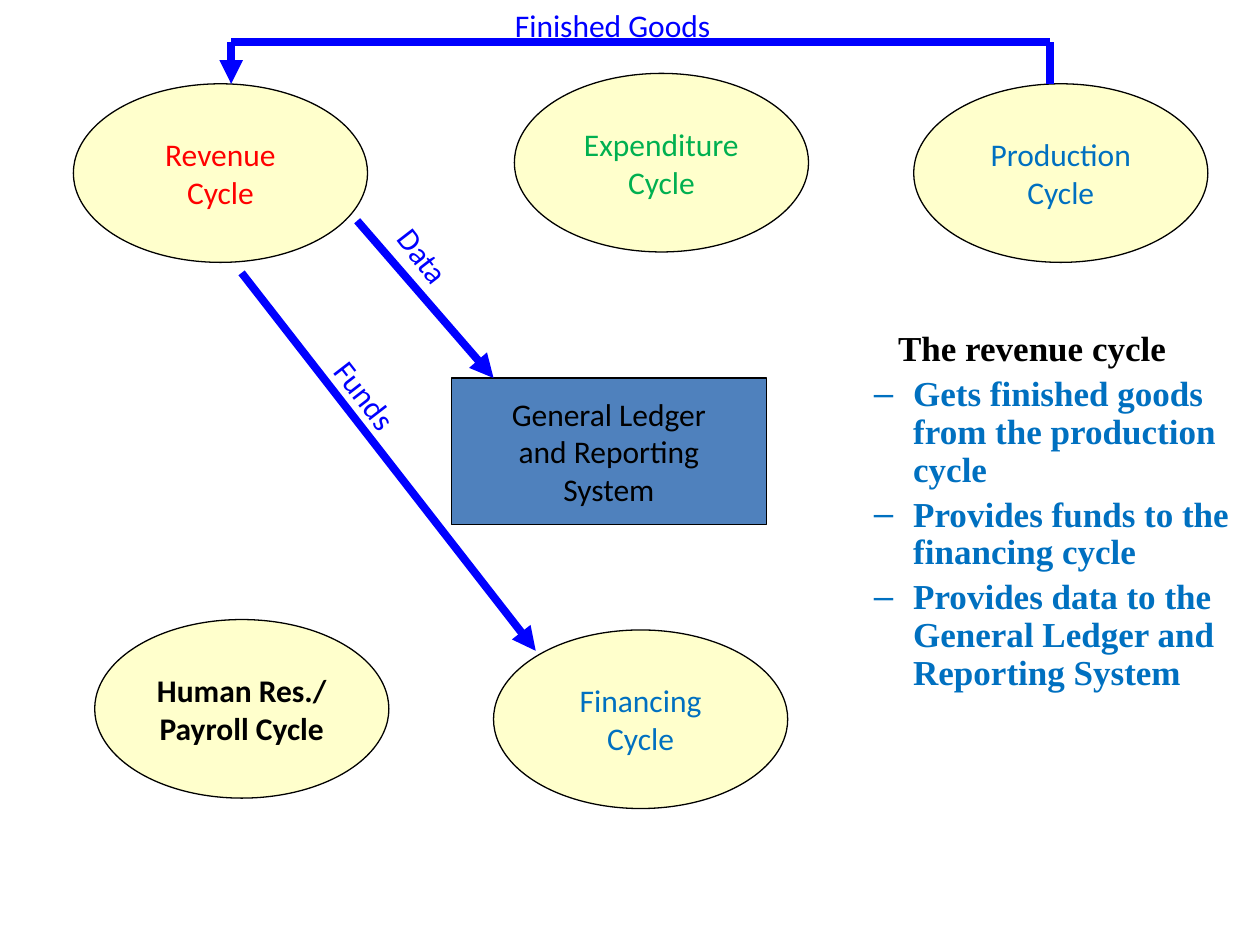
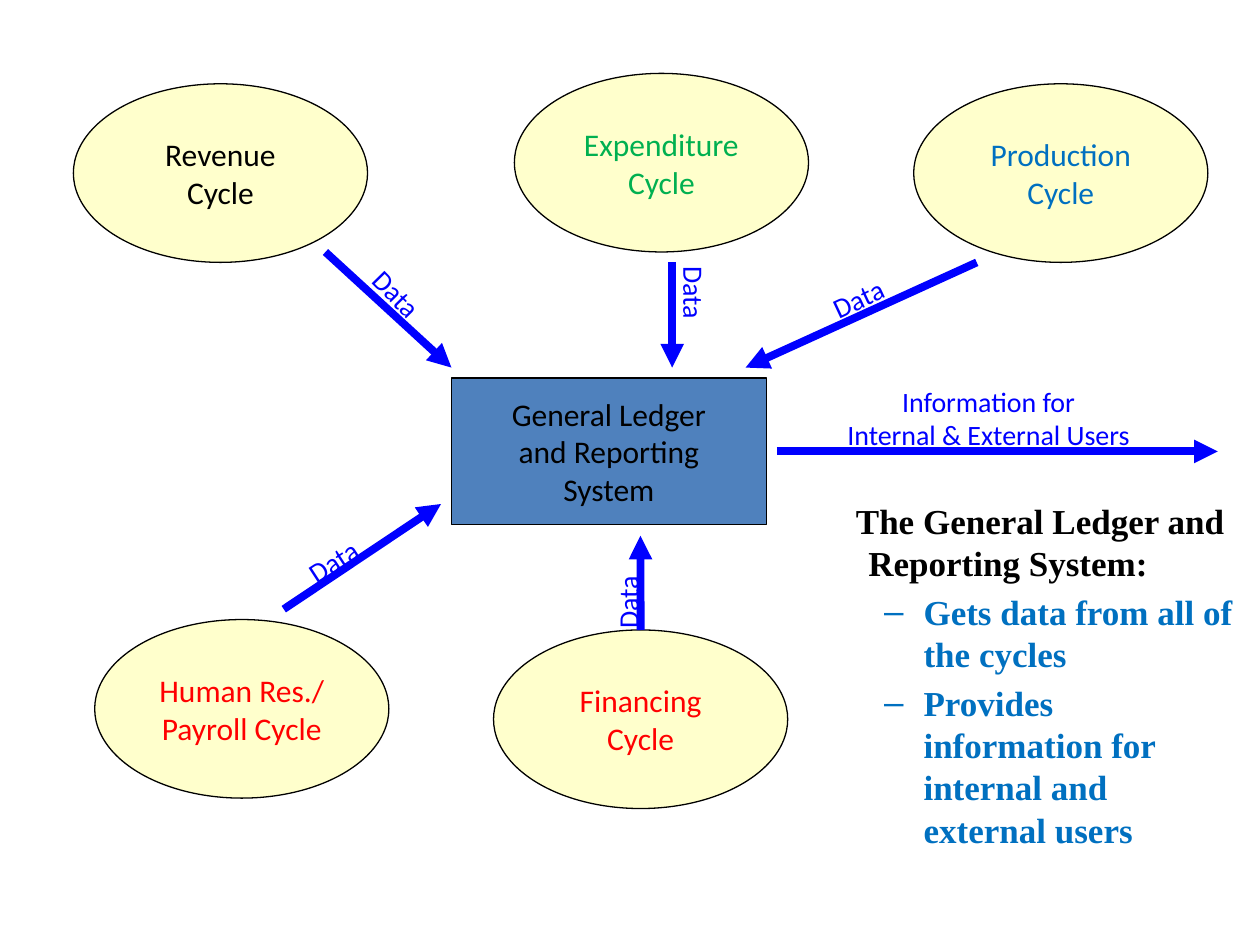
"""Build two slides on how accounting cycles exchange goods, funds and data."""
import pptx
import pptx.util
import pptx.dml.color
import pptx.enum.shapes
import pptx.enum.text
import pptx.oxml.ns
from lxml import etree

Cm = pptx.util.Cm
Pt = pptx.util.Pt
MIDDLE = pptx.enum.text.MSO_ANCHOR.MIDDLE
CENTER = pptx.enum.text.PP_ALIGN.CENTER
OVAL = pptx.enum.shapes.MSO_SHAPE.OVAL
RECTANGLE = pptx.enum.shapes.MSO_SHAPE.RECTANGLE

COLORS = {
    "black": "000000",
    "white": "FFFFFF",
    "cream": "FFFFCC",
    "steel": "4F81BD",
    "flow": "0000FF",
    "red": "FF0000",
    "green": "00B050",
    "blue": "0070C0",
}

CYCLES = {
    "revenue": (1.48, 1.69, ["Revenue", "Cycle"]),
    "expenditure": (10.37, 1.48, ["Expenditure", "Cycle"]),
    "production": (18.42, 1.69, ["Production", "Cycle"]),
    "payroll": (1.91, 12.49, ["Human Res./", "Payroll Cycle"]),
    "financing": (9.95, 12.7, ["Financing", "Cycle"]),
}


class CycleDeck:
    """Hold the shared style and the current slide."""

    def __init__(self):
        self.deck = pptx.Presentation()
        self.deck.slide_width = Cm(25.4)
        self.deck.slide_height = Cm(19.05)
        self.slide = None

    def color(self, name):
        return pptx.dml.color.RGBColor.from_string(COLORS[name])

    def fill(self, shape, name):
        shape.fill.solid()
        shape.fill.fore_color.rgb = self.color(name)

    def run(self, paragraph, text, color, size=18, bold=False, font="Calibri"):
        run = paragraph.add_run()
        run.text = text
        run.font.name = font
        run.font.size = Pt(size)
        run.font.bold = bold
        run.font.color.rgb = self.color(color)

    def lines(self, frame, texts, color, size=18, bold=False, align=None):
        for index, text in enumerate(texts):
            paragraph = frame.add_paragraph() if index else frame.paragraphs[0]
            paragraph.alignment = align
            self.run(paragraph, text, color, size, bold)

    def node(self, kind, left, top, width, height, texts, fill, color, bold=False):
        node = self.slide.shapes.add_shape(
            kind, Cm(left), Cm(top), Cm(width), Cm(height))
        node.shadow.inherit = False
        self.fill(node, fill)
        node.line.color.rgb = self.color("black")
        node.line.width = Pt(0.75)
        node.text_frame.word_wrap = False
        node.text_frame.vertical_anchor = MIDDLE
        self.lines(node.text_frame, texts, color, bold=bold, align=CENTER)
        return node

    def start(self, cycle_colors, bold_cycle=None):
        """Add a slide with the ledger and the five cycles, and return the cycles."""
        self.slide = self.deck.slides.add_slide(self.deck.slide_layouts[1])
        title = self.slide.shapes.title.element
        title.getparent().remove(title)
        self.node(RECTANGLE, 9.1, 7.62, 6.35, 2.96,
                  ["General Ledger", "and Reporting", "System"], "steel", "black")
        return {
            name: self.node(OVAL, left, top, 5.93, 3.6, texts, "cream",
                            cycle_colors[name], name == bold_cycle)
            for name, (left, top, texts) in CYCLES.items()
        }

    def flow(self, x1, y1, x2, y2, arrow=True):
        flow = self.slide.shapes.add_connector(
            pptx.enum.shapes.MSO_CONNECTOR.STRAIGHT, Cm(x1), Cm(y1), Cm(x2), Cm(y2))
        flow.line.color.rgb = self.color("flow")
        flow.line.width = Pt(4.5)
        qn = pptx.oxml.ns.qn
        if arrow:
            etree.SubElement(flow.line._get_or_add_ln(), qn("a:tailEnd"), type="triangle")
        etree.SubElement(flow._element.spPr, qn("a:effectLst"))
        return flow

    def label(self, left, top, width, height, texts, size=18, angle=0,
              wrap=False, align=None):
        label = self.slide.shapes.add_textbox(
            Cm(left), Cm(top), Cm(width), Cm(height))
        label.rotation = angle
        label.text_frame.word_wrap = wrap
        label.text_frame.auto_size = pptx.enum.text.MSO_AUTO_SIZE.SHAPE_TO_FIT_TEXT
        self.lines(label.text_frame, texts, "flow", size, align=align)

    def summary(self, left, top, width, height, heading, points,
                margin, indent=0, spacing=None):
        body = self.slide.placeholders[1]
        body.left, body.top = Cm(left), Cm(top)
        body.width, body.height = Cm(width), Cm(height)
        self.fill(body, "white")
        frame = body.text_frame
        first = frame.paragraphs[0]
        properties = first._p.get_or_add_pPr()
        properties.set("marL", str(Cm(margin)))
        properties.set("indent", str(Cm(indent)))
        first.line_spacing = spacing
        etree.SubElement(properties, pptx.oxml.ns.qn("a:buNone"))
        self.run(first, heading, "black", 20, True, "Times New Roman")
        for point in points:
            paragraph = frame.add_paragraph()
            paragraph.level = 1
            paragraph.line_spacing = spacing
            self.run(paragraph, point, "blue", 20, True, "Times New Roman")


def revenue_slide(deck):
    deck.start({"revenue": "red", "expenditure": "green", "production": "blue",
                "payroll": "black", "financing": "blue"}, bold_cycle="payroll")
    deck.summary(16.09, 6.56, 9.1, 10.23, "The revenue cycle", [
        "Gets finished goods from the production cycle",
        "Provides funds to the financing cycle",
        "Provides data to the General Ledger and Reporting System",
    ], margin=1.76, spacing=0.9)
    deck.flow(21.17, 1.69, 21.17, 0.85, arrow=False)
    deck.flow(21.17, 0.85, 4.66, 0.85, arrow=False)
    deck.flow(4.66, 0.85, 4.66, 1.69)
    deck.label(10.13, 0, 5.31, 1.02, ["Finished Goods"], wrap=True)
    deck.flow(4.87, 5.5, 10.8, 13.12)
    deck.label(6.27, 7.6, 2.41, 1.02, ["Funds"], angle=52.3)
    deck.flow(7.2, 4.45, 9.95, 7.62)
    deck.label(7.65, 4.72, 1.88, 1.02, ["Data"], angle=52.3)


def ledger_slide(deck):
    cycles = deck.start({"revenue": "black", "expenditure": "green",
                         "production": "blue", "payroll": "red", "financing": "red"})
    deck.summary(16.3, 9.95, 8.89, 8.04, "The General Ledger and Reporting System:", [
        "Gets data from all of the cycles",
        "Provides information for internal and external users",
    ], margin=0.95, indent=-0.25)
    deck.flow(6.56, 5.08, 9.1, 7.41)
    deck.flow(13.55, 5.29, 13.55, 7.41)
    deck.flow(19.69, 5.29, 15.03, 7.41)
    deck.flow(5.72, 12.28, 8.89, 10.16)
    deck.flow(12.91, 12.7, 12.91, 10.8).begin_connect(cycles["financing"], 0)
    deck.label(16.31, 7.62, 7.24, 1.63,
               ["Information for", "Internal & External Users"], 16, align=CENTER)
    for left, top, angle in [(11.79, 11.58, 270), (5.92, 10.8, 327),
                             (16.51, 5.51, 334.9), (13.13, 5.51, 90),
                             (7.19, 5.51, 45.5)]:
        deck.label(left, top, 1.73, 0.94, ["Data"], 16, angle)
    deck.flow(15.66, 9.1, 24.55, 9.1)


def main():
    deck = CycleDeck()
    revenue_slide(deck)
    ledger_slide(deck)
    deck.deck.save("out.pptx")


if __name__ == "__main__":
    main()
